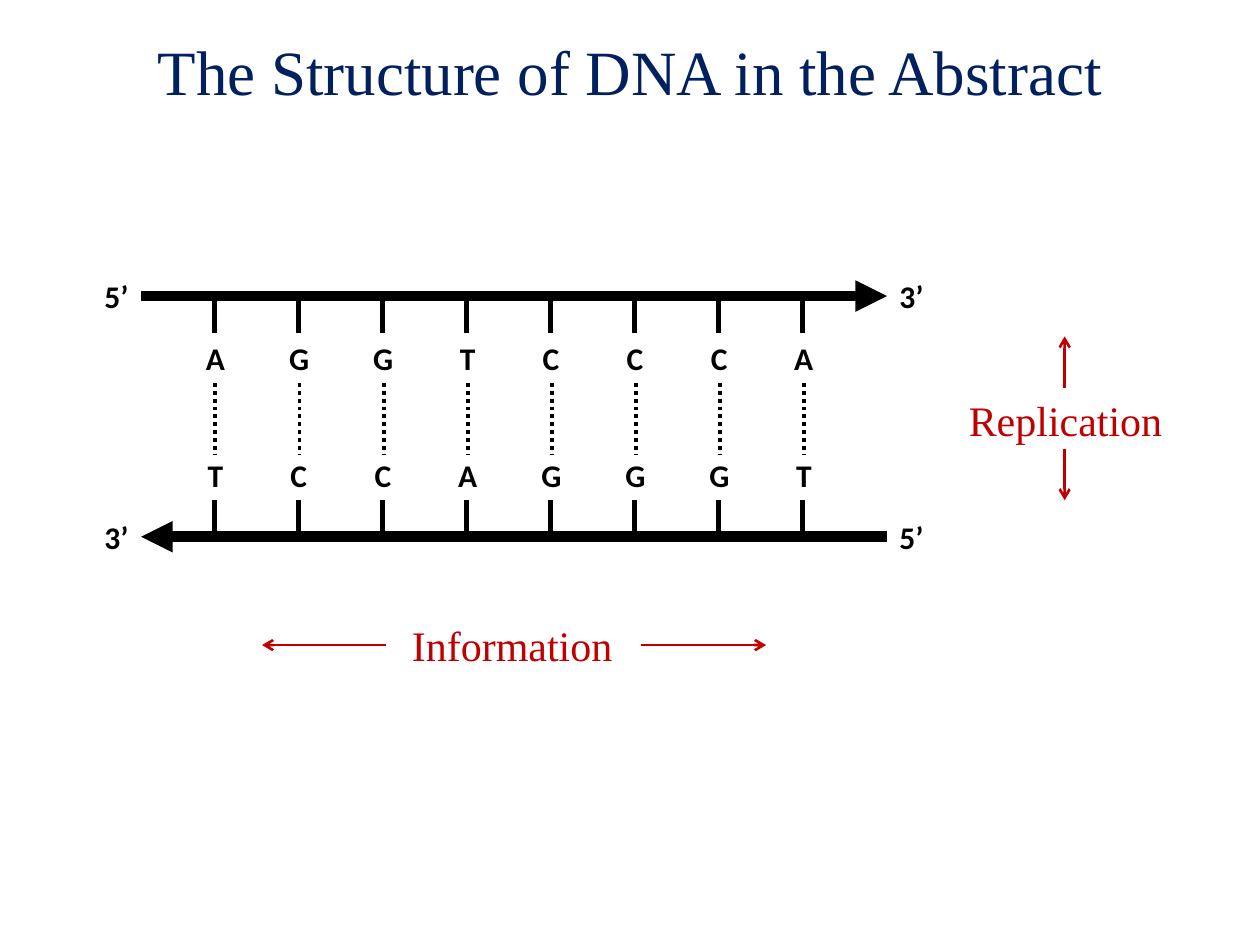
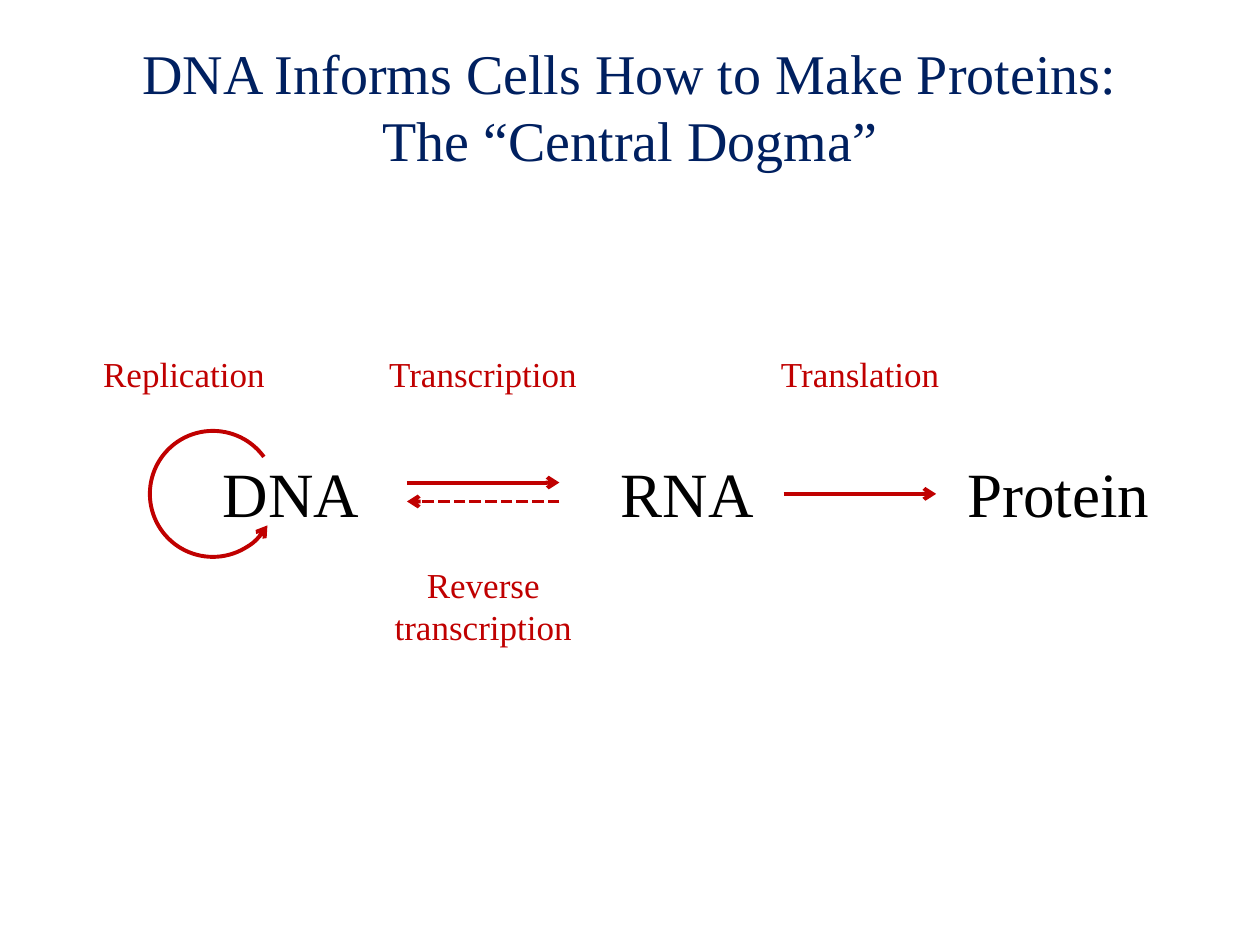
import pptx
import pptx.dml.color
import pptx.enum.dml
import pptx.enum.shapes
import pptx.enum.text
import pptx.oxml
import pptx.oxml.ns
import pptx.util

Inches = pptx.util.Inches
DASH = pptx.enum.dml.MSO_LINE
ALIGN = pptx.enum.text.PP_ALIGN

NAVY = "002060"
RED = "C00000"
BLACK = "000000"
SERIF = "Times New Roman"
SANS = "Calibri"

TOP_BASES = "AGGTCCCA"
PAIRS = {"A": "T", "T": "A", "C": "G", "G": "C"}
BASE_WIDTHS = {"A": 0.35, "T": 0.32, "C": 0.34, "G": 0.36}
FIRST_BASE_X = 1.7
BASE_PITCH = 4.67 / 7
STRAND_LEFT, STRAND_RIGHT = 1.12, 7.04
TOP_STRAND_Y, BOTTOM_STRAND_Y = 2.35, 4.26


def rgb(color):
    return pptx.dml.color.RGBColor.from_string(color)


def style_paragraph(para, size, color, font=SERIF, bold=False, align=None):
    para.font.name = font
    para.font.size = pptx.util.Pt(size)
    para.font.color.rgb = rgb(color)
    para.font.bold = bold
    para.alignment = align


def add_titled_page(deck, title, size, height):
    page = deck.slides.add_slide(deck.slide_layouts[5])
    box = page.shapes.title
    box.left, box.top = Inches(0.5), Inches(0.17)
    box.width, box.height = Inches(9), Inches(height)
    frame = box.text_frame
    frame.text = title
    frame.auto_size = pptx.enum.text.MSO_AUTO_SIZE.NONE
    frame.vertical_anchor = pptx.enum.text.MSO_ANCHOR.MIDDLE
    style_paragraph(frame.paragraphs[0], size, NAVY, align=ALIGN.CENTER)
    return page


def add_label(page, text, left, top, width, height, size, color,
              font=SERIF, bold=False, wrap=False, align=ALIGN.LEFT):
    box = page.shapes.add_textbox(
        Inches(left), Inches(top), Inches(width), Inches(height))
    frame = box.text_frame
    frame.word_wrap = wrap
    frame.text = text
    style_paragraph(frame.paragraphs[0], size, color, font, bold, align)


def add_strand_label(page, text, left, top, width):
    add_label(page, text, left, top, width, 0.4, 18, BLACK, SANS, bold=True)


def add_arrowhead(line, end, kind):
    outline = line._get_or_add_ln()
    head = pptx.oxml.parse_xml(
        f'<a:{end} {pptx.oxml.ns.nsdecls("a")} type="{kind}"/>')
    outline.append(head)


def add_line(page, start, end, color, weight, dash=None, arrow=None):
    line = page.shapes.add_connector(
        pptx.enum.shapes.MSO_CONNECTOR.STRAIGHT,
        *(Inches(value) for value in (*start, *end)))
    line.line.color.rgb = rgb(color)
    line.line.width = pptx.util.Pt(weight)
    if dash:
        line.line.dash_style = dash
    if arrow:
        add_arrowhead(line.line, "tailEnd", arrow)
    line._element.spPr.append(
        pptx.oxml.parse_xml(f'<a:effectLst {pptx.oxml.ns.nsdecls("a")}/>'))


def add_red_arrow(page, start, end, weight, dash=None):
    add_line(page, start, end, RED, weight, dash, "arrow")


def add_replication_loop(page, left, top, diameter, start_degrees, end_degrees):
    loop = page.shapes.add_shape(
        pptx.enum.shapes.MSO_SHAPE.ARC,
        Inches(left), Inches(top), Inches(diameter), Inches(diameter))
    loop.shadow.inherit = False
    loop.fill.background()
    loop.line.color.rgb = rgb(RED)
    loop.line.width = pptx.util.Pt(2.25)
    loop.adjustments[0] = start_degrees * 0.6
    loop.adjustments[1] = end_degrees * 0.6
    add_arrowhead(loop.line, "headEnd", "arrow")


def add_base_pair(page, x, top_base):
    for tick_top in (2.39, 3.97):
        add_line(page, (x, tick_top), (x, tick_top + 0.25), BLACK, 3)
    add_line(page, (x + 0.01, 3.04), (x + 0.01, 3.61), BLACK, 2.25,
             DASH.ROUND_DOT)
    for base, top in ((top_base, 2.64), (PAIRS[top_base], 3.57)):
        width = BASE_WIDTHS[base]
        add_strand_label(page, base, x + 0.01 - width / 2, top, width)


def build_structure_page(deck):
    page = add_titled_page(
        deck, "The Structure of DNA in the Abstract", 36, 0.78)
    add_line(page, (STRAND_LEFT, TOP_STRAND_Y), (STRAND_RIGHT, TOP_STRAND_Y),
             BLACK, 6, arrow="triangle")
    add_line(page, (STRAND_RIGHT, BOTTOM_STRAND_Y),
             (STRAND_LEFT, BOTTOM_STRAND_Y), BLACK, 6, arrow="triangle")
    for index, base in enumerate(TOP_BASES):
        add_base_pair(page, FIRST_BASE_X + index * BASE_PITCH, base)
    for strand_y, left_end, right_end in (
            (TOP_STRAND_Y, "5’", "3’"), (BOTTOM_STRAND_Y, "3’", "5’")):
        add_strand_label(page, left_end, 0.73, strand_y - 0.2, 0.39)
        add_strand_label(page, right_end, STRAND_RIGHT, strand_y - 0.2, 0.39)

    add_label(page, "Replication", 7.59, 3.08, 1.75, 0.5, 24, RED)
    add_red_arrow(page, (8.45, 3.56), (8.45, 3.97), 1.5)
    add_red_arrow(page, (8.45, 3.08), (8.45, 2.67), 1.5)
    add_label(page, "Information", 3.17, 4.87, 1.82, 0.5, 24, RED)
    add_red_arrow(page, (5.09, 5.12), (6.08, 5.12), 1.5)
    add_red_arrow(page, (3.06, 5.12), (2.08, 5.12), 1.5)


def build_dogma_page(deck):
    page = add_titled_page(
        deck, "DNA Informs Cells How to Make Proteins:\vThe “Central Dogma”",
        32, 1.33)
    add_replication_loop(page, 1.19, 3.42, 1, 30, 324)
    for molecule, left, width in (
            ("DNA", 1.67, 1.3), ("RNA", 4.83, 1.27), ("Protein", 7.58, 1.69)):
        add_label(page, molecule, left, 3.56, width, 0.71, 36, BLACK)
    add_red_arrow(page, (3.23, 3.83), (4.44, 3.83), 2.25)
    add_red_arrow(page, (4.44, 3.98), (3.23, 3.98), 2.25, DASH.SQUARE_DOT)
    add_red_arrow(page, (6.22, 3.92), (7.43, 3.92), 2.25)
    for process, left, width in (
            ("Replication", 0.72, 1.49), ("Transcription", 2.99, 1.69),
            ("Translation", 6.1, 1.46)):
        add_label(page, process, left, 2.75, width, 0.44, 20, RED)
    add_label(page, "Reverse transcription", 2.99, 4.42, 1.69, 0.77, 20, RED,
              wrap=True, align=ALIGN.CENTER)


def main():
    deck = pptx.Presentation()
    deck.slide_width, deck.slide_height = Inches(10), Inches(7.5)
    build_structure_page(deck)
    build_dogma_page(deck)
    deck.save("out.pptx")


if __name__ == "__main__":
    main()
